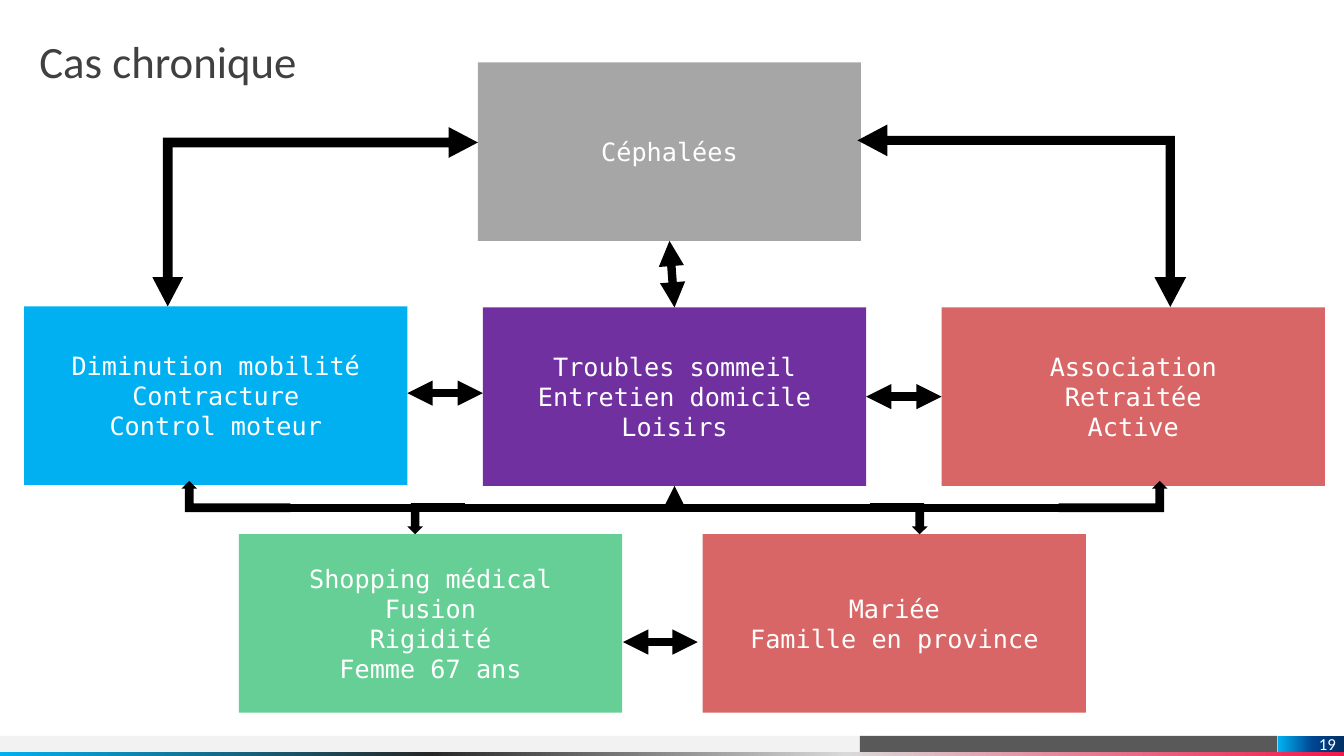
import pptx
import pptx.util
import pptx.dml.color
import pptx.enum.shapes
import pptx.enum.text
import pptx.oxml
import pptx.oxml.ns
from dataclasses import dataclass

Inches = pptx.util.Inches
Pt = pptx.util.Pt
SHAPE = pptx.enum.shapes.MSO_SHAPE
ALIGN = pptx.enum.text.PP_ALIGN
ANCHOR = pptx.enum.text.MSO_ANCHOR


@dataclass(frozen=True)
class Theme:
    sans: str = "Calibri"
    mono: str = "DejaVu Sans Mono"
    title_size: int = 32
    body_size: int = 18
    number_size: int = 12
    arrow_width: int = 6
    title: str = "404040"
    white: str = "FFFFFF"
    black: str = "000000"
    light: str = "F2F2F2"
    dark: str = "595959"
    grey: str = "A6A6A6"
    cyan: str = "00B0F0"
    purple: str = "7030A0"
    red: str = "C00000"
    green: str = "00B050"
    strip: tuple = ((0, "F2194A"), (37, "D9D9D9"), (68, "262626"), (100, "00B0F0"))
    badge: tuple = ((0, "003065"), (47, "004490"), (100, "00B0F0"))


T = Theme()
TITLE = "Cas chronique"
PAGE = "19"
BOX_W, BOX_H = 3.8, 1.77
BUS_Y = 5.04

BOXES = {
    "symptom": (4.74, 0.62, T.grey, 100, ["Céphalées"]),
    "body": (0.24, 3.04, T.cyan, 100,
             ["Diminution mobilité", "Contracture", "Control moteur"]),
    "daily": (4.79, 3.05, T.purple, 100,
              ["Troubles sommeil", "Entretien domicile", "Loisirs"]),
    "social": (9.34, 3.05, T.red, 60, ["Association", "Retraitée", "Active"]),
    "person": (2.37, 5.3, T.green, 60,
               ["Shopping médical", "Fusion", "Rigidité", "Femme 67 ans"]),
    "family": (6.97, 5.3, T.red, 60, ["Mariée", "Famille en province"]),
}

LINES = [
    ((6.69, 3.05), (6.64, 2.39), ("headEnd", "tailEnd"), ("daily", 0), ("symptom", 2)),
    ((8.59, 3.93), (9.34, 3.93), ("headEnd", "tailEnd"), ("daily", 3), ("social", 1)),
    ((4.04, 3.9), (4.79, 3.9), ("headEnd", "tailEnd"), None, None),
    ((6.18, 6.37), (6.92, 6.37), ("headEnd", "tailEnd"), None, None),
    ((6.69, 4.99), (6.69, 4.82), ("tailEnd",), None, ("daily", 2)),
    ((10.5, BUS_Y), (2.88, BUS_Y), (), None, None),
]

CORNER = SHAPE.LEFT_UP_ARROW
BENT = SHAPE.BENT_UP_ARROW
BENT_ADJ = (0.28, 0.25, 0.25)
ARROWS = [
    (CORNER, (1.51, 1.26, 3.23, 1.78), 180, False, (0.055, 0.086, 0.164)),
    (CORNER, (9.23, 0.51, 1.81, 3.26), 270, False, (0.05, 0.087, 0.164)),
    (BENT, (4.04, 4.99, 0.57, 0.31), 180, False, BENT_ADJ),
    (BENT, (8.63, 4.99, 0.57, 0.31), 180, True, BENT_ADJ),
    (BENT, (10.5, 4.77, 1.08, 0.31), 0, False, BENT_ADJ),
    (BENT, (1.8, 4.77, 1.08, 0.31), 0, True, BENT_ADJ),
]


def rgb(color):
    return pptx.dml.color.RGBColor.from_string(color)


def add_xml(parent, tag, **attrs):
    el = pptx.oxml.parse_xml(f"<a:{tag} {pptx.oxml.ns.nsdecls('a')}/>")
    for name, value in attrs.items():
        el.set(name, str(value))
    parent.append(el)
    return el


def add_shape(s, kind, box, color, alpha=100):
    sp = s.shapes.add_shape(kind, *map(Inches, box))
    sp.shadow.inherit = False
    sp.line.fill.background()
    sp.fill.solid()
    sp.fill.fore_color.rgb = rgb(color)
    if alpha < 100:
        clr = sp._element.spPr.find(".//" + pptx.oxml.ns.qn("a:srgbClr"))
        add_xml(clr, "alpha", val=alpha * 1000)
    return sp


def set_gradient(sp, stops):
    spPr = sp._element.spPr
    solid = spPr.find(pptx.oxml.ns.qn("a:solidFill"))
    grad = add_xml(spPr, "gradFill", rotWithShape=1)
    spPr.replace(solid, grad)
    gs_list = add_xml(grad, "gsLst")
    for pos, color in stops:
        add_xml(add_xml(gs_list, "gs", pos=pos * 1000), "srgbClr", val=color)
    add_xml(grad, "lin", ang=180 * 60000, scaled=0)


def add_text(tf, lines, font, size, color, align):
    for i, line in enumerate(lines):
        p = tf.paragraphs[0] if i == 0 else tf.add_paragraph()
        p.alignment = align
        r = p.add_run()
        r.text = line
        r.font.name = font
        r.font.size = Pt(size)
        r.font.color.rgb = rgb(color)


def set_margins(tf, right=0):
    tf.margin_left = tf.margin_top = tf.margin_bottom = 0
    tf.margin_right = Inches(right)


def add_line(s, start, end, heads=()):
    ends = map(Inches, (*start, *end))
    cn = s.shapes.add_connector(pptx.enum.shapes.MSO_CONNECTOR.STRAIGHT, *ends)
    cn.line.color.rgb = rgb(T.black)
    cn.line.width = Pt(T.arrow_width)
    ln = cn.line._get_or_add_ln()
    for head in heads:
        add_xml(ln, head, type="triangle")
    add_xml(cn._element.spPr, "effectLst")
    return cn


def add_footer(s):
    add_shape(s, SHAPE.RECTANGLE, (-0.01, 7.3, 10.29, 0.16), T.light)
    add_shape(s, SHAPE.RECTANGLE, (8.53, 7.3, 4.14, 0.16), T.dark)
    set_gradient(add_shape(s, SHAPE.RECTANGLE, (-0.01, 7.46, 13.34, 0.04), T.grey), T.strip)
    sp = add_shape(s, SHAPE.RECTANGLE, (12.68, 7.3, 0.65, 0.16), T.cyan)
    set_gradient(sp, T.badge)
    set_margins(sp.text_frame, 0.08)
    sp.text_frame.vertical_anchor = ANCHOR.MIDDLE
    add_text(sp.text_frame, [PAGE], T.sans, T.number_size, T.white, ALIGN.RIGHT)


def add_title(s):
    sp = s.shapes.title
    sp.left, sp.top, sp.width, sp.height = map(Inches, (0.39, 0.39, 7.65, 0.59))
    tf = sp.text_frame
    set_margins(tf)
    tf.vertical_anchor = ANCHOR.TOP
    add_text(tf, [TITLE], T.sans, T.title_size, T.title, ALIGN.LEFT)
    tf.paragraphs[0].line_spacing = 0.9


def main():
    prs = pptx.Presentation()
    prs.slide_width, prs.slide_height = Inches(13.33), Inches(7.5)
    s = prs.slides.add_slide(prs.slide_layouts[5])
    add_title(s)
    add_footer(s)
    add_line(s, (4.61, BUS_Y), (8.63, BUS_Y))

    boxes = {}
    for name, (x, y, color, alpha, lines) in BOXES.items():
        sp = add_shape(s, SHAPE.RECTANGLE, (x, y, BOX_W, BOX_H), color, alpha)
        sp.text_frame.vertical_anchor = ANCHOR.MIDDLE
        add_text(sp.text_frame, lines, T.mono, T.body_size, T.white, ALIGN.CENTER)
        boxes[name] = sp

    for kind, box, angle, flip, adjustments in ARROWS:
        sp = add_shape(s, kind, box, T.black)
        sp.rotation = angle
        for i, value in enumerate(adjustments):
            sp.adjustments[i] = value
        if flip:
            sp._element.spPr.find(pptx.oxml.ns.qn("a:xfrm")).set("flipH", "1")

    for start, end, heads, source, target in LINES:
        cn = add_line(s, start, end, heads)
        if source:
            cn.begin_connect(boxes[source[0]], source[1])
        if target:
            cn.end_connect(boxes[target[0]], target[1])

    prs.save("out.pptx")


if __name__ == "__main__":
    main()
